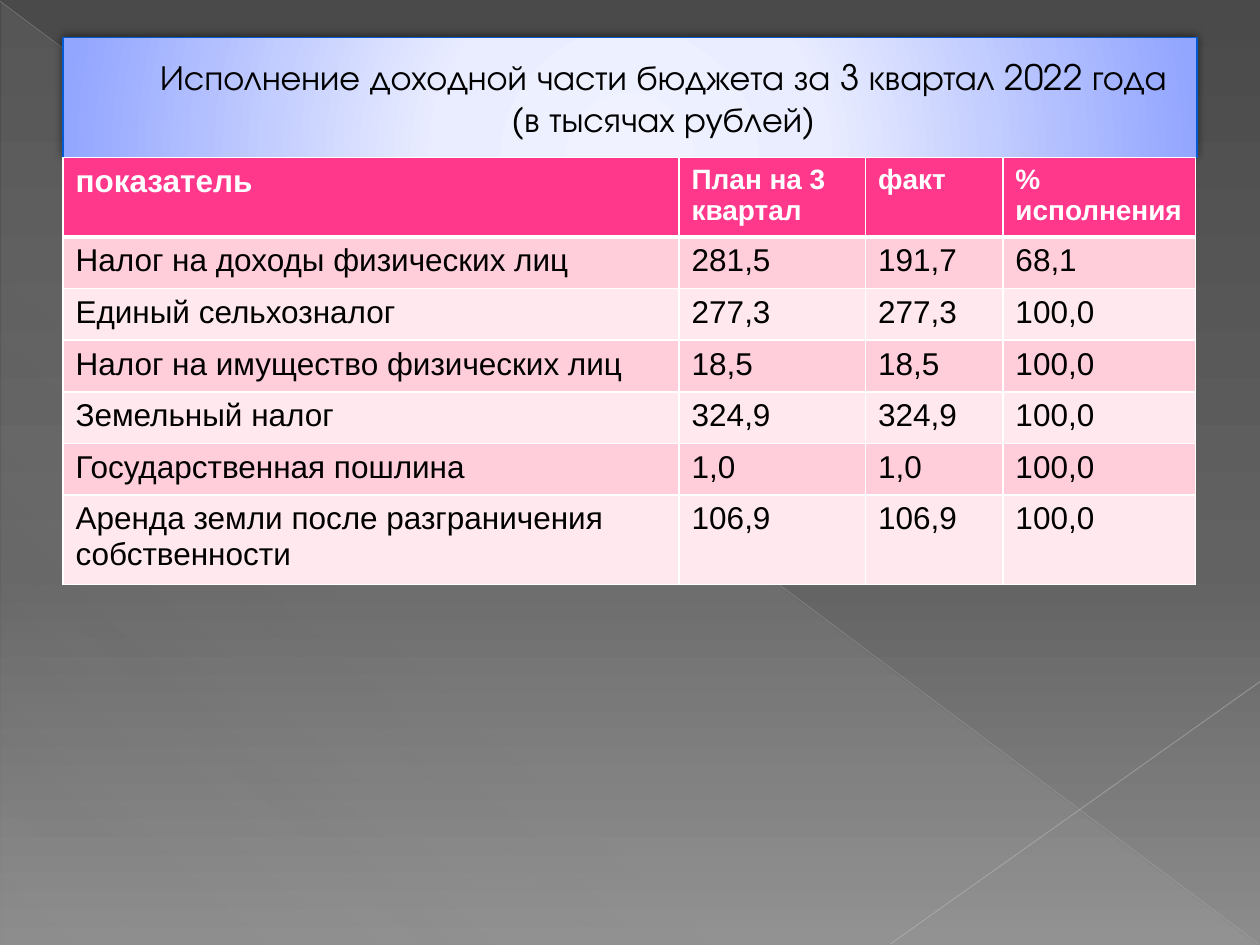
from dataclasses import dataclass

from pptx import Presentation
from pptx.dml.color import RGBColor
from pptx.enum.shapes import MSO_CONNECTOR, MSO_SHAPE
from pptx.enum.text import MSO_ANCHOR, PP_ALIGN
from pptx.oxml import parse_xml
from pptx.oxml.ns import nsdecls, qn
from pptx.util import Inches, Pt

BLACK = RGBColor(0x00, 0x00, 0x00)
WHITE = RGBColor(0xFF, 0xFF, 0xFF)
PINK = RGBColor(0xFF, 0x38, 0x8C)
BAND_DARK = RGBColor(0xFF, 0xCE, 0xDA)
BAND_LIGHT = RGBColor(0xFF, 0xE8, 0xEE)
TITLE_EDGE = RGBColor(0x00, 0x5B, 0xD3)
TEXT_EDGE = RGBColor(0xB1, 0x27, 0x61)
BG_TOP = RGBColor(0x4A, 0x4A, 0x4A)
BG_MIDDLE = RGBColor(0x62, 0x62, 0x62)
BG_BOTTOM = RGBColor(0x8C, 0x8C, 0x8C)
HAZE = RGBColor(0xD2, 0xD2, 0xD2)
TITLE_CENTER = RGBColor(0xF0, 0xF2, 0xFF)
TITLE_MIDDLE = RGBColor(0xEA, 0xED, 0xFF)
TITLE_SIDE = RGBColor(0x92, 0xA5, 0xFF)

TITLE = ("Исполнение доходной части бюджета за 3 квартал 2022 года", "(в тысячах рублей)")
HEADER = ("показатель", "План на 3 квартал", "факт", "% исполнения")
ROWS = (
    ("Налог на доходы физических лиц", "281,5", "191,7", "68,1"),
    ("Единый сельхозналог", "277,3", "277,3", "100,0"),
    ("Налог на имущество физических лиц", "18,5", "18,5", "100,0"),
    ("Земельный налог", "324,9", "324,9", "100,0"),
    ("Государственная пошлина", "1,0", "1,0", "100,0"),
    ("Аренда земли после разграничения собственности", "106,9", "106,9", "100,0"),
)
COL_WIDTHS = (4.89, 1.48, 1.09, 1.53)
ROW_HEIGHTS = (0.63, *[0.41] * 5, 0.71)


@dataclass(frozen=True)
class Stop:
    position: int
    color: RGBColor
    opacity: int = 100


@dataclass(frozen=True)
class DecorLine:
    start: tuple[float, float]
    end: tuple[float, float]
    color: RGBColor
    width: float
    opacity: int


DECOR_LINES = (
    DecorLine((0, 0.01), (9.99, 7.49), RGBColor(0xBF, 0xBF, 0xBF), 0.39, 35),
    DecorLine((10, 5.41), (7.07, 7.49), RGBColor(0xC6, 0xC6, 0xC6), 0.47, 45),
)


def linear(angle: int) -> str:
    return f'<a:lin ang="{angle * 60000}" scaled="0"/>'


def set_gradient(parent, stops: tuple[Stop, ...], direction: str) -> None:
    """Swap the solid fill of a properties element for a gradient."""
    marks = "".join(
        f'<a:gs pos="{stop.position * 1000}"><a:srgbClr val="{stop.color}">'
        f'<a:alpha val="{stop.opacity * 1000}"/></a:srgbClr></a:gs>'
        for stop in stops
    )
    gradient = parse_xml(
        f'<a:gradFill {nsdecls("a")} rotWithShape="1"><a:gsLst>{marks}</a:gsLst>'
        f"{direction}</a:gradFill>"
    )
    parent.replace(parent.find(qn("a:solidFill")), gradient)


def add_text(p, text: str, *, size: float, font: str = "Arial",
             color: RGBColor = BLACK, bold: bool = False):
    r = p.add_run()
    r.text = text
    r.font.size, r.font.name, r.font.bold = Pt(size), font, bold
    r.font.color.rgb = color
    return r


def add_box(s, kind: MSO_SHAPE, left: float, top: float, width: float, height: float):
    sp = s.shapes.add_shape(kind, Inches(left), Inches(top), Inches(width), Inches(height))
    sp.shadow.inherit = False
    sp.fill.solid()
    sp.line.fill.background()
    return sp


def add_decor_line(s, item: DecorLine) -> None:
    line = s.shapes.add_connector(
        MSO_CONNECTOR.STRAIGHT, *(Inches(v) for v in (*item.start, *item.end)))
    line.line.color.rgb = item.color
    line.line.width = Pt(item.width)
    spPr = line.element.spPr
    color = spPr.find(".//" + qn("a:srgbClr"))
    color.append(parse_xml(f'<a:alpha {nsdecls("a")} val="{item.opacity * 1000}"/>'))
    spPr.append(parse_xml(f'<a:effectLst {nsdecls("a")}/>'))


def add_backdrop(s) -> None:
    s.background.fill.solid()
    set_gradient(s.element.find(".//" + qn("p:bgPr")),
                 (Stop(0, BG_TOP), Stop(60, BG_MIDDLE), Stop(100, BG_BOTTOM)), linear(90))
    haze = add_box(s, MSO_SHAPE.RIGHT_TRIANGLE, 0.01, 0.02, 9.98, 7.48)
    set_gradient(haze.element.spPr,
                 (Stop(0, HAZE, 10), Stop(70, HAZE, 8), Stop(100, HAZE, 1)), linear(133))
    for item in DECOR_LINES:
        add_decor_line(s, item)


def add_title(s) -> None:
    sp = add_box(s, MSO_SHAPE.RECTANGLE, 0.5, 0.3, 9, 0.95)
    sp.line.color.rgb = TITLE_EDGE
    sp.line.width = Pt(0.75)
    spPr = sp.element.spPr
    set_gradient(
        spPr, (Stop(0, TITLE_CENTER), Stop(34, TITLE_MIDDLE), Stop(100, TITLE_SIDE)),
        '<a:path path="circle"><a:fillToRect l="50000" t="155000" r="50000" b="-55000"/></a:path>')
    spPr.find(qn("a:effectLst")).append(parse_xml(
        f'<a:outerShdw {nsdecls("a")} blurRad="{Pt(5)}" dist="{Pt(2)}" dir="{245 * 60000}" '
        f'rotWithShape="0"><a:srgbClr val="{BLACK}"><a:alpha val="50000"/></a:srgbClr>'
        "</a:outerShdw>"))
    tf = sp.text_frame
    tf.word_wrap = True
    tf.vertical_anchor = MSO_ANCHOR.MIDDLE
    p = tf.paragraphs[0]
    p.alignment = PP_ALIGN.CENTER
    p._p.get_or_add_pPr().set("marL", str(Inches(0.53)))
    for i, text in enumerate(TITLE):
        if i:
            p.add_line_break()
        r = add_text(p, text, size=20, font="TeX Gyre Adventor")
        r.font._rPr.insert(0, parse_xml(
            f'<a:ln {nsdecls("a")} w="{Pt(0.5)}"><a:solidFill>'
            f'<a:srgbClr val="{TEXT_EDGE}"/></a:solidFill></a:ln>'))


def set_borders(cell, bottom: float) -> None:
    tcPr = cell._tc.get_or_add_tcPr()
    for i, (side, width) in enumerate((("L", 1), ("R", 1), ("T", 1), ("B", bottom))):
        tcPr.insert(i, parse_xml(
            f'<a:ln{side} {nsdecls("a")} w="{Pt(width)}"><a:solidFill>'
            f'<a:srgbClr val="{WHITE}"/></a:solidFill></a:ln{side}>'))


def add_budget_table(s) -> None:
    table = s.shapes.add_table(
        len(ROW_HEIGHTS), len(COL_WIDTHS), Inches(0.5), Inches(1.25),
        Inches(9), Inches(sum(ROW_HEIGHTS))).table
    for column, width in zip(table.columns, COL_WIDTHS):
        column.width = Inches(width)
    for i, (row, height, texts) in enumerate(zip(table.rows, ROW_HEIGHTS, (HEADER, *ROWS))):
        row.height = Inches(height)
        header = i == 0
        fill = PINK if header else (BAND_LIGHT, BAND_DARK)[i % 2]
        for j, (cell, text) in enumerate(zip(row.cells, texts)):
            cell.fill.solid()
            cell.fill.fore_color.rgb = fill
            set_borders(cell, 3 if header else 1)
            add_text(cell.text_frame.paragraphs[0], text, bold=header,
                     size=16 if header and j else 18, color=WHITE if header else BLACK)


def main() -> None:
    prs = Presentation()
    prs.slide_width, prs.slide_height = Inches(10), Inches(7.5)
    s = prs.slides.add_slide(prs.slide_layouts[6])
    add_backdrop(s)
    add_title(s)
    add_budget_table(s)
    prs.save("out.pptx")


if __name__ == "__main__":
    main()
